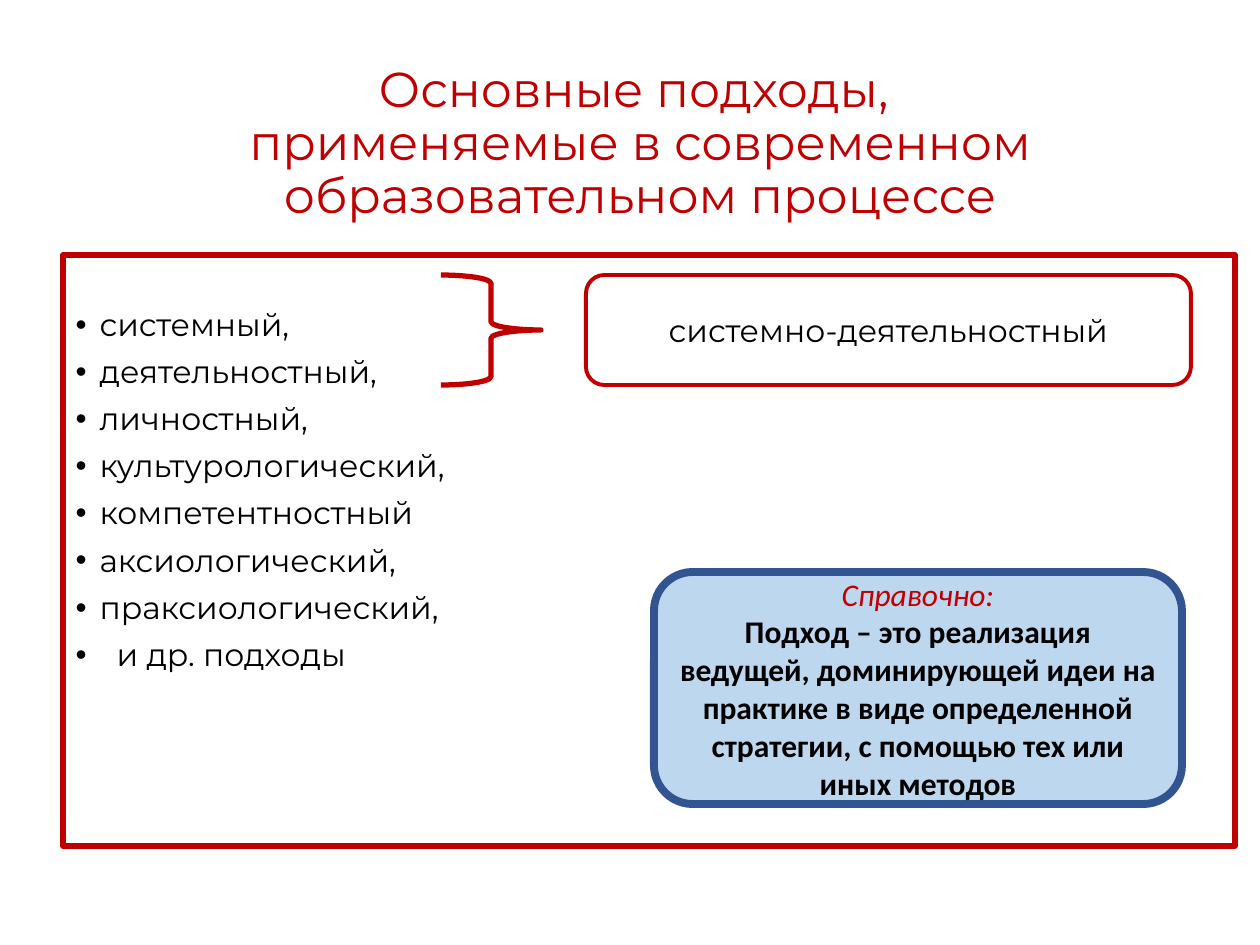
import pptx
import pptx.dml.color
import pptx.enum.shapes
import pptx.enum.text
import pptx.util

SHAPE = pptx.enum.shapes.MSO_SHAPE
ANCHOR = pptx.enum.text.MSO_ANCHOR
CENTER = pptx.enum.text.PP_ALIGN.CENTER
LEFT = pptx.enum.text.PP_ALIGN.LEFT
RED, BLACK, BLUE, PALE = "C00000", "000000", "325491", "BDD7EE"


def px(n):
    return pptx.util.Emu(round(n * 914400 / 126))


def rgb(value):
    return pptx.dml.color.RGBColor.from_string(value)


class Deck:
    font = "Montserrat"
    size = 18

    def __init__(self):
        self.prs = pptx.Presentation()
        self.prs.slide_width, self.prs.slide_height = px(1260), px(945)
        self.s = self.prs.slides.add_slide(self.prs.slide_layouts[1])

    def place(self, sp, box):
        sp.left, sp.top, sp.width, sp.height = map(px, box)

    def outline(self, sp, color, width):
        sp.line.color.rgb = rgb(color)
        sp.line.width = pptx.util.Pt(width)

    def format(self, p, color=BLACK, size=None, font=None, align=CENTER, bold=False, italic=False):
        p.alignment = align
        for r in p.runs:
            r.font.name = font or self.font
            r.font.size = pptx.util.Pt(size or self.size)
            r.font.bold, r.font.italic = bold, italic
            r.font.color.rgb = rgb(color)

    def title(self, box, text):
        sp = self.s.shapes.title
        self.place(sp, box)
        tf = sp.text_frame
        tf.text = text
        tf.auto_size = pptx.enum.text.MSO_AUTO_SIZE.NONE
        tf.vertical_anchor = ANCHOR.MIDDLE
        p = tf.paragraphs[0]
        p.line_spacing = 0.9
        self.format(p, RED, 28)

    def bullets(self, box, items, top):
        sp = self.s.placeholders[1]
        self.place(sp, box)
        self.outline(sp, RED, 3)
        tf = sp.text_frame
        tf.text = "\n".join(text for text, indent in items)
        tf.auto_size = pptx.enum.text.MSO_AUTO_SIZE.NONE
        tf.vertical_anchor = ANCHOR.TOP
        tf.margin_top = px(top)
        for p, (text, indent) in zip(tf.paragraphs, items):
            p.line_spacing = 0.9
            p.space_before = pptx.util.Pt(7.5)
            pPr = p._p.get_or_add_pPr()
            pPr.set("marL", str(px(indent)))
            pPr.set("indent", str(-px(indent)))
            self.format(p, align=LEFT)

    def shape(self, kind, box, color, width, fill=None, paragraphs=()):
        sp = self.s.shapes.add_shape(kind, *map(px, box))
        sp.shadow.inherit = False
        self.outline(sp, color, width)
        if fill:
            sp.fill.solid()
            sp.fill.fore_color.rgb = rgb(fill)
        else:
            sp.fill.background()
        if paragraphs:
            tf = sp.text_frame
            tf.word_wrap = True
            tf.vertical_anchor = ANCHOR.MIDDLE
            tf.text = "\n".join(text for text, style in paragraphs)
            for p, (text, style) in zip(tf.paragraphs, paragraphs):
                self.format(p, **style)


def main():
    deck = Deck()
    deck.title((97, 53, 1086, 183),
               "Основные подходы, \vприменяемые в современном образовательном процессе")
    approaches = ["системный,", "деятельностный,", "личностный,", "культурологический,",
                  "компетентностный", "аксиологический,", "праксиологический,"]
    items = [(text, 24) for text in approaches] + [("и др. подходы", 41)]
    deck.bullets((63, 255, 1172, 591), items, top=54)
    deck.shape(SHAPE.ROUNDED_RECTANGLE, (654, 572, 528, 232), BLUE, 4.5, PALE, [
        ("Справочно:", dict(color=RED, font="Calibri", italic=True)),
        ("Подход – это реализация ведущей, доминирующей идеи на практике в виде "
         "определенной стратегии, с помощью тех или иных методов",
         dict(font="Calibri", bold=True)),
    ])
    deck.shape(SHAPE.RIGHT_BRACE, (441, 275, 100, 110), RED, 3)
    deck.shape(SHAPE.ROUNDED_RECTANGLE, (586, 275, 605, 110), RED, 2.25,
               paragraphs=[("системно-деятельностный", {})])
    deck.prs.save("out.pptx")


if __name__ == "__main__":
    main()
